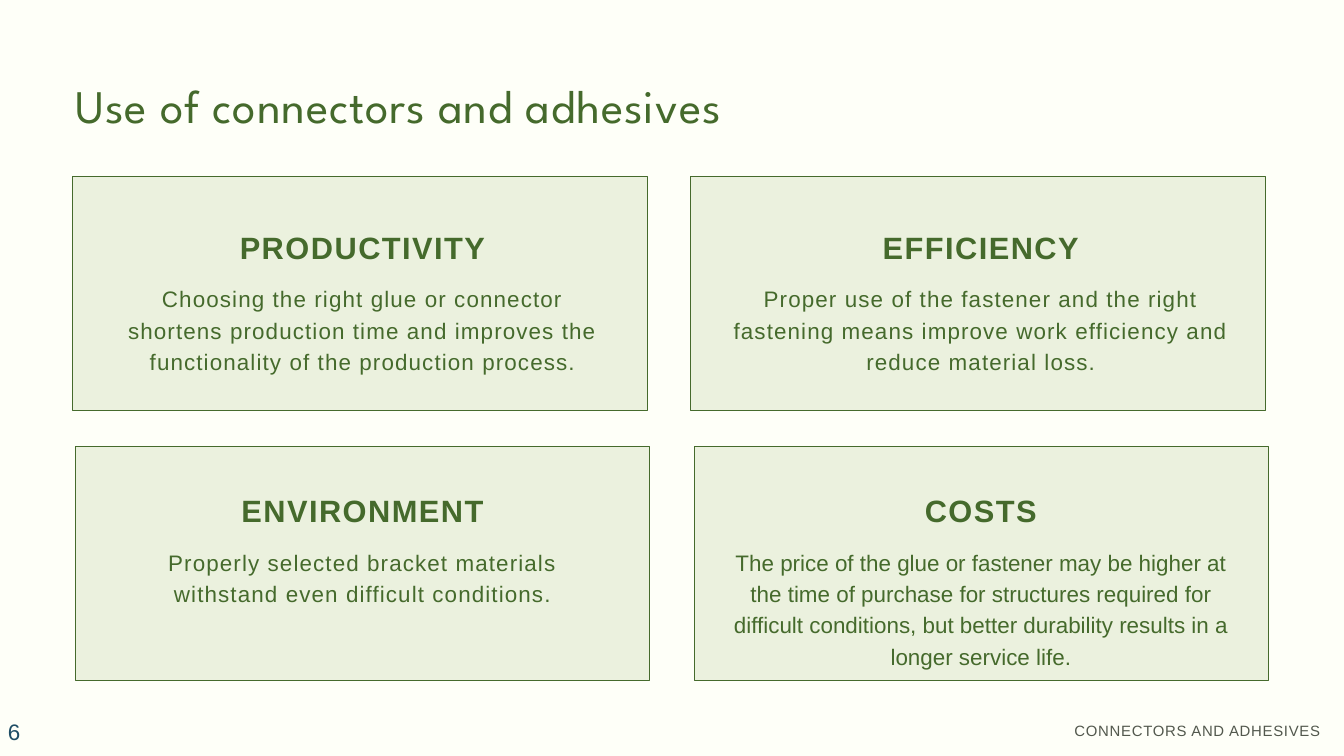
from pptx import Presentation
from pptx.dml.color import RGBColor
from pptx.enum.shapes import MSO_SHAPE
from pptx.enum.text import MSO_ANCHOR, MSO_AUTO_SIZE, PP_ALIGN
from pptx.util import Emu, Pt

PX = 9144
COLORS = {
    "background": "FEFFF8",
    "green": "456A2C",
    "panel": "EBF1DE",
    "footer": "52584D",
    "number": "1E4D65",
}
FORMATS = {
    "title": {"size": Pt(50), "name": "League Spartan"},
    "heading": {"size": Pt(33), "name": "Arial", "bold": True},
    "body": {"size": Pt(24), "name": "Arial"},
    "footer": {"size": Pt(16), "name": "Arial"},
}


def px(*lengths):
    return [Emu(length * PX) for length in lengths]


def add_text(slide, box, text, style, color="green", align=PP_ALIGN.LEFT, line=None, spacing=0):
    shape = slide.shapes.add_textbox(*px(*box))
    frame = shape.text_frame
    frame_format = {"word_wrap": True}
    if line:
        frame_format.update(
            margin_left=0, margin_top=0, margin_right=0, margin_bottom=0,
            auto_size=MSO_AUTO_SIZE.SHAPE_TO_FIT_TEXT,
        )
    else:
        frame_format["vertical_anchor"] = MSO_ANCHOR.MIDDLE
    for name, value in frame_format.items():
        setattr(frame, name, value)
    paragraph = frame.paragraphs[0]
    paragraph.alignment = align
    if line:
        paragraph.line_spacing = Pt(line)
    run = paragraph.add_run()
    run.text = text
    for name, value in FORMATS[style].items():
        setattr(run.font, name, value)
    run.font.color.rgb = RGBColor.from_string(COLORS[color])
    if spacing:
        run._r.get_or_add_rPr().set("spc", str(spacing))


presentation = Presentation()
presentation.slide_width, presentation.slide_height = px(2000, 1125)
slide = presentation.slides.add_slide(presentation.slide_layouts[6])
slide.background.fill.solid()
slide.background.fill.fore_color.rgb = RGBColor.from_string(COLORS["background"])

add_text(slide, (1133, 1070, 832, 29), "CONNECTORS AND ADHESIVES", "footer",
         "footer", PP_ALIGN.RIGHT, 22.4, 80)
add_text(slide, (112, 105, 1771, 94), "Use of connectors and adhesives", "title",
         line=66.8, spacing=100)

cards = [
    (108, 262, 170, 338, 140, 120, "PRODUCTIVITY",
     "Choosing the right glue or connector shortens production time and improves "
     "the functionality of the production process."),
    (1028, 262, 1090, 338, 140, 120, "EFFICIENCY",
     "Proper use of the fastener and the right fastening means improve work "
     "efficiency and reduce material loss."),
    (112, 664, 170, 730, 92, 120, "ENVIRONMENT",
     "Properly selected bracket materials withstand even difficult conditions."),
    (1033, 664, 1090, 730, 187, 0, "COSTS",
     "The price of the glue or fastener may be higher at the time of purchase for "
     "structures required for difficult conditions, but better durability results "
     "in a longer service life."),
]
for left, top, text_left, text_top, body_height, spacing, heading, body in cards:
    panel = slide.shapes.add_shape(MSO_SHAPE.RECTANGLE, *px(left, top, 855, 348))
    panel.shadow.inherit = False
    panel.fill.solid()
    panel.fill.fore_color.rgb = RGBColor.from_string(COLORS["panel"])
    panel.line.color.rgb = RGBColor.from_string(COLORS["green"])
    panel.line.width = Pt(0.75)
    add_text(slide, (text_left, text_top, 739, 56), heading, "heading",
             align=PP_ALIGN.CENTER, line=41.2, spacing=160)
    add_text(slide, (text_left, text_top + 80, 739, body_height), body, "body",
             align=PP_ALIGN.CENTER, line=33.6, spacing=spacing)

add_text(slide, (2, 1069, 233, 40), "6", "body", "number", spacing=120)

presentation.save("out.pptx")
